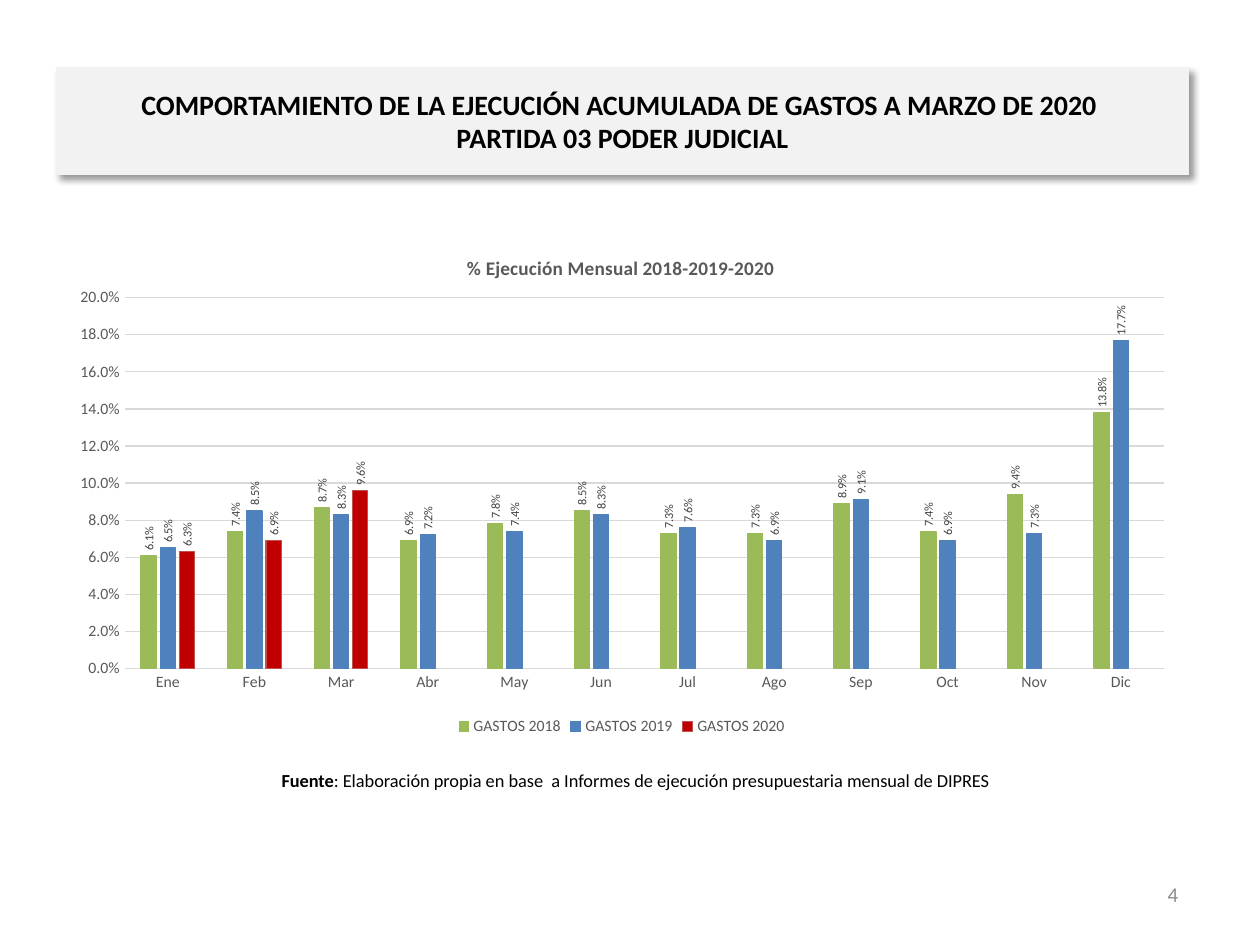
"""Build the slide on monthly budget execution of the judiciary, 2018 to 2020."""
from dataclasses import dataclass

from lxml import etree
from pptx import Presentation
from pptx.chart.data import CategoryChartData
from pptx.dml.color import RGBColor
from pptx.enum.chart import XL_CHART_TYPE, XL_LABEL_POSITION, XL_LEGEND_POSITION, XL_TICK_MARK
from pptx.enum.text import MSO_ANCHOR, PP_ALIGN
from pptx.oxml import parse_xml
from pptx.oxml.ns import nsdecls, qn
from pptx.util import Pt

COLUMNS = XL_CHART_TYPE.COLUMN_CLUSTERED
OUTSIDE_END = XL_LABEL_POSITION.OUTSIDE_END
BOTTOM = XL_LEGEND_POSITION.BOTTOM
NO_TICKS = XL_TICK_MARK.NONE
MIDDLE = MSO_ANCHOR.MIDDLE
CENTER, RIGHT = PP_ALIGN.CENTER, PP_ALIGN.RIGHT


@dataclass(frozen=True)
class Theme:
    font: str = "Calibri"
    black: str = "000000"
    panel: str = "F2F2F2"
    grid: str = "D9D9D9"
    muted: str = "595959"
    label: str = "404040"
    page: str = "8C8C8C"
    title_size: float = 16
    page_size: float = 12
    chart_title_size: float = 11
    source_size: float = 10.5
    chart_size: float = 10
    axis_size: float = 9
    label_size: float = 7


THEME = Theme()
MONTHS = ["Ene", "Feb", "Mar", "Abr", "May", "Jun", "Jul", "Ago", "Sep", "Oct", "Nov", "Dic"]
SERIES = [
    ("GASTOS 2018", "9BBB59", "9BBB59",
     [0.061, 0.074, 0.087, 0.069, 0.078, 0.085, 0.073, 0.073, 0.089, 0.074, 0.094, 0.138]),
    ("GASTOS 2019", "4F81BD", "4F81BD",
     [0.065, 0.085, 0.083, 0.072, 0.074, 0.083, 0.076, 0.069, 0.091, 0.069, 0.073, 0.177]),
    ("GASTOS 2020", "C00000", "C0504D", [0.063, 0.069, 0.096] + [None] * 9),
]
TITLE_LINES = [
    "COMPORTAMIENTO DE LA EJECUCIÓN ACUMULADA DE GASTOS A MARZO DE 2020 ",
    "PARTIDA 03 PODER JUDICIAL",
]
TEXT_BOXES = [
    (512.6, 496.8, 167.8, 28.8, RIGHT, THEME.page_size, THEME.page, [("4", False)]),
    (32.4, 431.3, 661.7, 28.8, CENTER, THEME.source_size, THEME.black,
     [("Fuente", True),
      (": Elaboración propia en base  a Informes de ejecución presupuestaria mensual de DIPRES",
       False)]),
]


def style_font(font, size, color, bold=False):
    font.name = THEME.font
    font.size = Pt(size)
    font.bold = bold
    font.color.rgb = RGBColor.from_string(color)


def place_chart_part(part, index, **position):
    for old_layout in part.findall(qn("c:layout")):
        part.remove(old_layout)
    layout = etree.Element(qn("c:layout"))
    manual = etree.SubElement(layout, qn("c:manualLayout"))
    if "w" in position:
        etree.SubElement(manual, qn("c:layoutTarget"), val="inner")
    for axis in ("x", "y"):
        etree.SubElement(manual, qn(f"c:{axis}Mode"), val="edge")
    for key, value in position.items():
        etree.SubElement(manual, qn(f"c:{key}"), val=str(value))
    part.insert(index, layout)


presentation = Presentation()
presentation.slide_width, presentation.slide_height = Pt(720), Pt(540)
slide = presentation.slides.add_slide(presentation.slide_layouts[5])

title = slide.shapes.title
title.left, title.top, title.width, title.height = Pt(32.4), Pt(38.4), Pt(646.6), Pt(61.2)
title.fill.solid()
title.fill.fore_color.rgb = RGBColor.from_string(THEME.panel)
title.line.color.rgb = RGBColor.from_string(THEME.panel)
title.line.width = Pt(0.75)
title.element.spPr.append(parse_xml(
    f'<a:effectLst {nsdecls("a")}><a:outerShdw blurRad="{Pt(4)}" dist="{Pt(3)}" dir="2700000" '
    'algn="tl" rotWithShape="0"><a:srgbClr val="000000"><a:alpha val="40000"/></a:srgbClr>'
    '</a:outerShdw></a:effectLst>'))
title.text_frame.vertical_anchor = MIDDLE
paragraph = title.text_frame.paragraphs[0]
paragraph.alignment = CENTER
for number, line in enumerate(TITLE_LINES):
    if number:
        paragraph.add_line_break()
    run = paragraph.add_run()
    run.text = line
    style_font(run.font, THEME.title_size, THEME.black, True)

for left, top, width, height, alignment, size, color, runs in TEXT_BOXES:
    text_box = slide.shapes.add_textbox(Pt(left), Pt(top), Pt(width), Pt(height))
    text_box.text_frame.word_wrap = True
    text_box.text_frame.vertical_anchor = MIDDLE
    paragraph = text_box.text_frame.paragraphs[0]
    paragraph.alignment = alignment
    for text, bold in runs:
        run = paragraph.add_run()
        run.text = text
        style_font(run.font, size, color, bold)

chart_data = CategoryChartData(number_format="0.0%")
chart_data.categories = MONTHS
for name, _, _, values in SERIES:
    chart_data.add_series(name, values)
chart = slide.shapes.add_chart(
    COLUMNS, Pt(32.4), Pt(128.9), Pt(645.8), Pt(294.5), chart_data).chart
style_font(chart.font, THEME.chart_size, THEME.black)

chart.has_title = True
run = chart.chart_title.text_frame.paragraphs[0].add_run()
run.text = "% Ejecución Mensual 2018-2019-2020"
style_font(run.font, THEME.chart_title_size, THEME.muted, True)
place_chart_part(chart.element.xpath("c:chart/c:title")[0], 1, x=0.36, y=0.05)
place_chart_part(chart.element.xpath("c:chart/c:plotArea")[0], 0, x=0.06, y=0.14, w=0.92, h=0.72)

chart.has_legend = True
chart.legend.position = BOTTOM
chart.legend.include_in_layout = False
style_font(chart.legend.font, THEME.axis_size, THEME.muted)

for axis in (chart.category_axis, chart.value_axis):
    axis.major_tick_mark = axis.minor_tick_mark = NO_TICKS
    style_font(axis.tick_labels.font, THEME.axis_size, THEME.muted)
value_axis = chart.value_axis
value_axis.minimum_scale, value_axis.maximum_scale, value_axis.major_unit = 0, 0.2, 0.02
value_axis.tick_labels.number_format = "0.0%"
value_axis.tick_labels.number_format_is_linked = False
value_axis.format.line.fill.background()
for line in (chart.category_axis.format.line, value_axis.major_gridlines.format.line):
    line.color.rgb = RGBColor.from_string(THEME.grid)
    line.width = Pt(0.75)

plot = chart.plots[0]
plot.gap_width, plot.overlap, plot.vary_by_categories = 219, -27, False
for series, (_, fill_color, line_color, _) in zip(plot.series, SERIES):
    series.format.fill.solid()
    series.format.fill.fore_color.rgb = RGBColor.from_string(fill_color)
    series.format.line.color.rgb = RGBColor.from_string(line_color)
    series.format.line.width = Pt(0.75)
    labels = series.data_labels
    labels.show_value = True
    labels.position = OUTSIDE_END
    labels.number_format = "0.0%"
    labels.number_format_is_linked = False
    style_font(labels.font, THEME.label_size, THEME.label)
for body in chart.element.xpath(".//c:dLbls/c:txPr/a:bodyPr"):
    body.set("rot", "-5400000")
    body.set("vert", "horz")

presentation.save("out.pptx")
